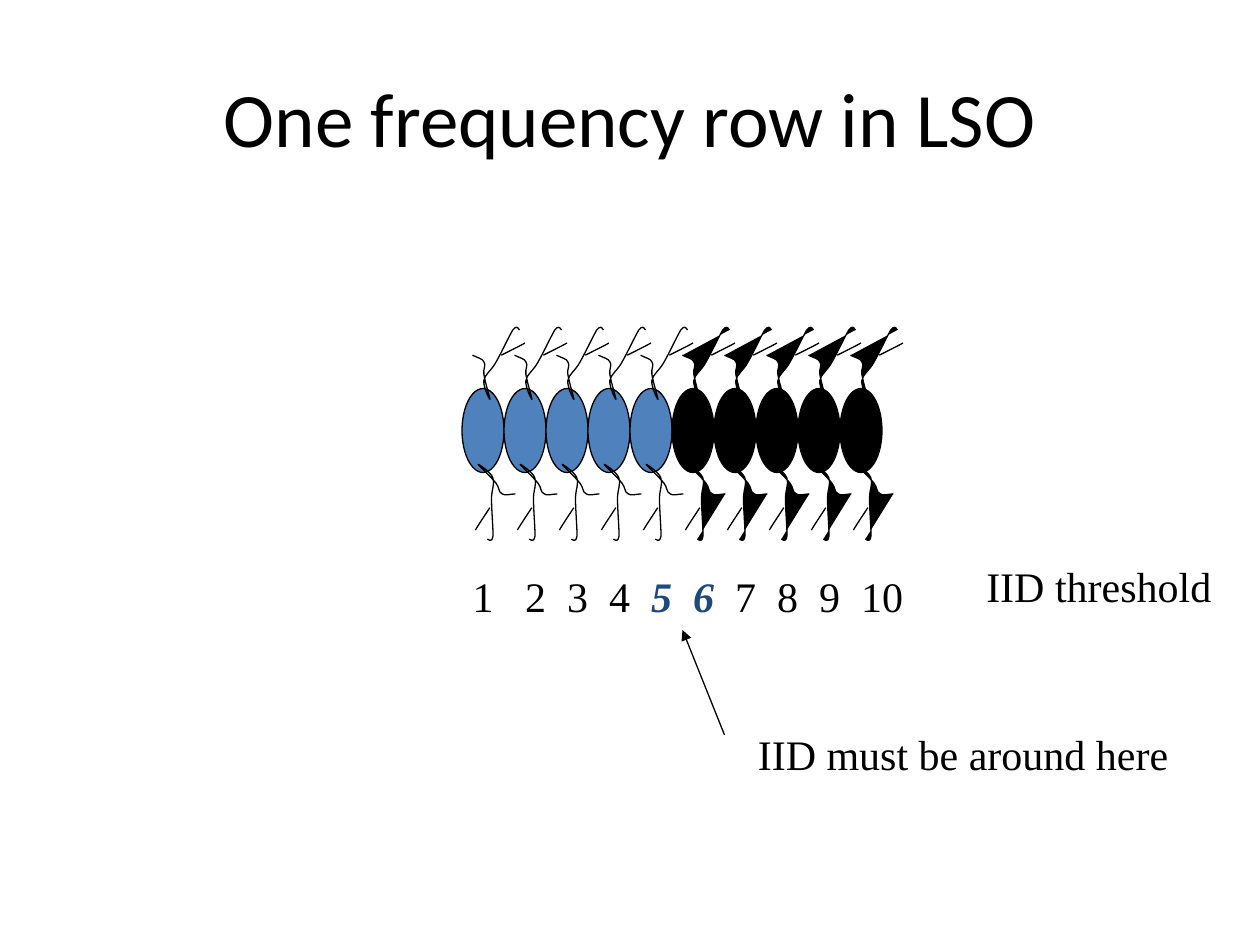
from lxml.etree import SubElement
from pptx import Presentation
from pptx.dml.color import RGBColor
from pptx.enum.shapes import MSO_CONNECTOR as Link, MSO_SHAPE as Kind
from pptx.enum.text import MSO_ANCHOR as Anchor, MSO_AUTO_SIZE as Fit, PP_ALIGN as Align
from pptx.oxml.ns import qn
from pptx.util import Pt

BLACK, BLUE, NAVY = "000000", "4F81BD", "1F497D"
SERIF = "Times New Roman"
LEFT, STEP, COUNT = 264, 24, 10

# Bezier points: x from the left of the cell, y from the top of the slide
BRANCH = [
    (6, 203), (9, 204.5), (12, 205), (12.5, 206.8),
    (14, 208.8), (12, 210.5), (12.5, 213.8),
    (13, 217.5), (16, 227.5), (16, 228.2),
    (16, 229), (12, 221), (12.5, 217.5),
    (13, 213.8), (17, 211.7), (19.5, 206.8),
    (22, 202.5), (27, 192), (29, 188.6),
    (31, 186), (32, 187), (32.8, 188.6),
]
TWIG = [(22.5, 203), (28.3, 200), (34, 197.3), (36, 196)]


def color(code):
    return RGBColor.from_string(code)


def paint(shape, fill):
    shape.shadow.inherit = False
    if fill:
        shape.fill.solid()
        shape.fill.fore_color.rgb = color(fill)
    else:
        shape.fill.background()
    shape.line.color.rgb = color(BLACK)
    shape.line.width = Pt(0.75)


def add_curve(shapes, points, dx, dy, fill, turn=0):
    """Draw a chain of cubic curves, moved by dx and dy and then turned."""
    spots = [(Pt(x + dx), Pt(y + dy)) for x, y in points]
    form = shapes.build_freeform(*spots[0], scale=1.0)
    form.add_line_segments(spots[1:], close=False)
    shape = form.convert_to_shape()
    track = shape.element.find(".//" + qn("a:path"))
    lines = track.findall(qn("a:lnTo"))
    for i in range(0, len(lines), 3):
        curve = SubElement(track, qn("a:cubicBezTo"))
        for line in lines[i:i + 3]:
            curve.append(line[0])
            track.remove(line)
    paint(shape, fill)
    shape.rotation = turn


def add_cell(slide, left, body, fill):
    """Draw a neuron with dendrites above and, turned, below."""
    shapes = slide.shapes.add_group_shape().shapes
    oval = shapes.add_shape(Kind.OVAL, Pt(left), Pt(222), Pt(STEP), Pt(48))
    paint(oval, body)
    add_curve(shapes, BRANCH, left, 0, fill)
    add_curve(shapes, TWIG, left, 0, fill)
    add_curve(shapes, BRANCH, left - 2.8, 77.5, fill, 150)
    add_curve(shapes, TWIG, left - 17.5, 97, fill, 150)


def style(run, size, face, ink=BLACK):
    run.font.size = Pt(size)
    run.font.name = face
    run.font.color.rgb = color(ink)


def add_text(slide, text, left, top, width, height=36, size=24, face=SERIF):
    box = slide.shapes.add_textbox(Pt(left), Pt(top), Pt(width), Pt(height))
    frame = box.text_frame
    frame.text = text
    frame.word_wrap = False
    frame.auto_size = Fit.SHAPE_TO_FIT_TEXT
    style(frame.paragraphs[0].runs[0], size, face)
    return frame


def add_title(slide, text):
    frame = add_text(slide, text, 36, 21.6, 648, 90, 44, "Calibri")
    frame.auto_size = Fit.NONE
    frame.word_wrap = True
    frame.vertical_anchor = Anchor.MIDDLE
    frame.paragraphs[0].alignment = Align.CENTER


def add_scale(slide):
    """Number the cells, one tab stop for each, with 5 and 6 marked."""
    frame = add_text(slide, "1\t2\t3\t4\t", 263, 322.5, 260.6)
    frame.word_wrap = True
    frame.margin_right = 0
    para = frame.paragraphs[0]
    mark = para.add_run()
    mark.text = "5\t6"
    style(mark, 24, SERIF, NAVY)
    mark.font.bold = mark.font.italic = True
    rest = para.add_run()
    rest.text = "\t7\t8\t9\t10"
    style(rest, 24, SERIF)
    tabs = SubElement(para._p.get_or_add_pPr(), qn("a:tabLst"))
    for i in range(COUNT - 1):
        SubElement(tabs, qn("a:tab"), pos=str(Pt(30 + i * STEP)), algn="l")


def add_arrow(slide, x1, y1, x2, y2):
    link = slide.shapes.add_connector(Link.STRAIGHT, Pt(x1), Pt(y1), Pt(x2), Pt(y2))
    link.line.color.rgb = color(BLACK)
    link.line.width = Pt(0.75)
    SubElement(link.line._get_or_add_ln(), qn("a:tailEnd"), type="triangle")
    SubElement(link.element.spPr, qn("a:effectLst"))


def main():
    deck = Presentation()
    deck.slide_width, deck.slide_height = Pt(720), Pt(540)
    slide = deck.slides.add_slide(deck.slide_layouts[6])
    add_title(slide, "One frequency row in LSO")
    for i in range(COUNT):
        body, fill = (BLUE, None) if i < COUNT // 2 else (BLACK, BLACK)
        add_cell(slide, LEFT + i * STEP, body, fill)
    add_scale(slide)
    add_text(slide, "IID threshold", 556.5, 317, 143)
    add_arrow(slide, 414, 420, 390, 360)
    add_text(slide, "IID must be around here", 426, 412.5, 249)
    deck.save("out.pptx")


if __name__ == "__main__":
    main()
